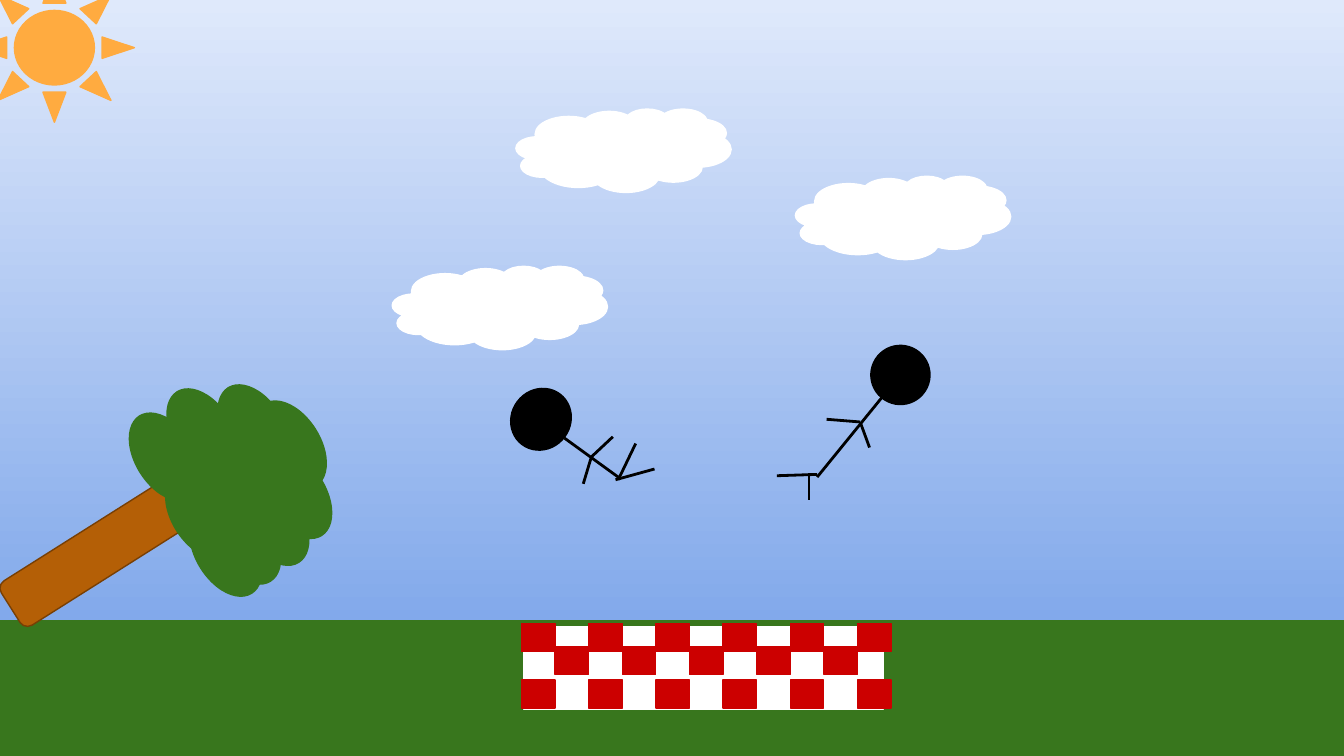
from lxml import etree
from pptx import Presentation
from pptx.dml.color import RGBColor
from pptx.enum.shapes import MSO_CONNECTOR, MSO_SHAPE
from pptx.oxml.ns import qn
from pptx.util import Inches, Pt

RECT, ROUNDED = MSO_SHAPE.RECTANGLE, MSO_SHAPE.ROUNDED_RECTANGLE
OVAL, FACE = MSO_SHAPE.OVAL, MSO_SHAPE.SMILEY_FACE
CLOUD, SUN = MSO_SHAPE.CLOUD, MSO_SHAPE.SUN
STRAIGHT = MSO_CONNECTOR.STRAIGHT

COLORS = {
    "sky_top": "DFE9FB", "sky_bottom": "6E9BE7", "green": "38761D",
    "trunk": "B45F06", "bark": "783F04", "white": "FFFFFF",
    "red": "CC0000", "black": "000000", "sun": "FFAB40",
}

# Content: positions and sizes in inches
TREE_TILT = 57.7
LEAF_SIZE = (0.72, 0.44)
LEAVES = [
    (0.87, 3.18), (1.14, 3.61), (1.29, 3.22), (1.51, 3.57),
    (1.15, 3.0), (1.46, 3.8), (1.67, 3.66), (1.52, 3.27),
    (1.84, 3.46), (1.53, 2.97), (1.32, 3.89), (1.8, 3.09),
]
CHECK_SIZE = (0.25, 0.21)
CHECK_STEP = 0.5
CHECK_ROWS = [(3.88, 4.64, 6), (4.13, 4.81, 5), (3.88, 5.06, 6)]  # left, top, count
CLOUD_SIZE = (1.6, 0.62)
CLOUDS = [(3.84, 0.81), (5.92, 1.31), (2.92, 1.98)]
FIGURES = [
    {"head": (6.48, 2.57, 0.44, 0.44), "tilt": 39.8, "flipped": False,
     "limbs": [(6.56, 2.96, 6.08, 3.55), (6.08, 3.53, 5.78, 3.54),
               (6.02, 3.52, 6.02, 3.72), (6.47, 3.33, 6.4, 3.14),
               (6.4, 3.14, 6.15, 3.12)]},
    {"head": (3.79, 2.9, 0.47, 0.44), "tilt": 307, "flipped": True,
     "limbs": [(4.2, 3.26, 4.6, 3.55), (4.34, 3.6, 4.4, 3.4),
               (4.4, 3.4, 4.56, 3.25), (4.58, 3.57, 4.87, 3.49),
               (4.6, 3.57, 4.73, 3.3)]},
]


def color(name):
    return RGBColor.from_string(COLORS[name])


def add_shape(page, kind, place, fill, line=None, tilt=0, adjust=None):
    shape = page.shapes.add_shape(kind, *map(Inches, place))
    shape.shadow.inherit = False
    shape.fill.solid()
    shape.fill.fore_color.rgb = color(fill)
    shape.line.color.rgb = color(line or fill)
    shape.line.width = Pt(0.75)
    shape.rotation = tilt
    if adjust is not None:
        shape.adjustments[0] = adjust
    return shape


def add_limb(page, ends):
    limb = page.shapes.add_connector(STRAIGHT, *map(Inches, ends))
    limb.line.color.rgb = color("black")
    limb.line.width = Pt(1.5)
    etree.SubElement(limb.element.spPr, qn("a:effectLst"))


def add_figure(page, figure):
    head = add_shape(page, FACE, figure["head"], "black",
                     tilt=figure["tilt"], adjust=0.047)
    if figure["flipped"]:
        head.element.spPr.find(qn("a:xfrm")).set("flipH", "1")
    for ends in figure["limbs"]:
        add_limb(page, ends)


def paint_sky(page):
    sky = page.background.fill
    sky.gradient()
    sky.gradient_angle = 270  # counter-clockwise, so top to bottom
    for stop, position, name in zip(sky.gradient_stops, (0, 1),
                                    ("sky_top", "sky_bottom")):
        stop.position = position
        stop.color.rgb = color(name)


def main():
    deck = Presentation()
    deck.slide_width = Inches(10)
    deck.slide_height = deck.slide_width * 9 // 16  # widescreen
    page = deck.slides.add_slide(deck.slide_layouts[6])
    paint_sky(page)

    # Ground and tree
    add_shape(page, RECT, (0, 4.62, 10, 1), "green")
    add_shape(page, ROUNDED, (0.59, 3.24, 0.39, 1.67), "trunk", "bark",
              TREE_TILT, 0.167)
    for spot in LEAVES:
        add_shape(page, OVAL, spot + LEAF_SIZE, "green", tilt=TREE_TILT)

    # Picnic blanket
    add_shape(page, RECT, (3.9, 4.66, 2.67, 0.62), "white")
    for left, top, count in CHECK_ROWS:
        for column in range(count):
            spot = (left + column * CHECK_STEP, top)
            add_shape(page, RECT, spot + CHECK_SIZE, "red")

    # Stick figures
    for figure in FIGURES:
        add_figure(page, figure)

    # Clouds and sun
    for spot in CLOUDS:
        add_shape(page, CLOUD, spot + CLOUD_SIZE, "white")
    add_shape(page, SUN, (-0.19, -0.2, 1.19, 1.11), "sun", adjust=0.25)

    deck.save("out.pptx")


if __name__ == "__main__":
    main()
